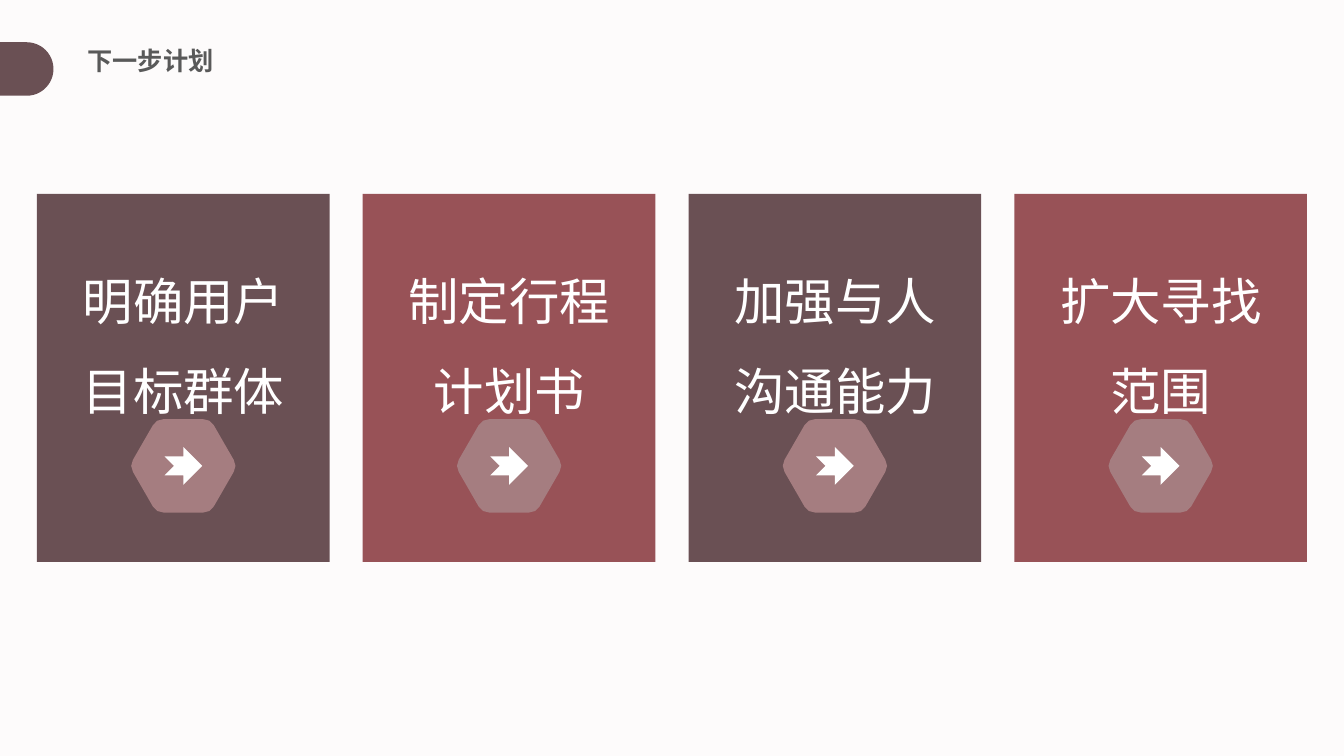
"""Build the next-step plan slide with four action cards."""
from dataclasses import dataclass
from math import cos, pi, sin

from lxml import etree
from pptx import Presentation
from pptx.dml.color import RGBColor
from pptx.enum.shapes import MSO_SHAPE
from pptx.enum.text import MSO_AUTO_SIZE, PP_ALIGN
from pptx.oxml.ns import qn
from pptx.util import Pt

RECTANGLE = MSO_SHAPE.RECTANGLE
DELAY = MSO_SHAPE.FLOWCHART_DELAY
NOTCHED_ARROW = MSO_SHAPE.NOTCHED_RIGHT_ARROW
GROW = MSO_AUTO_SIZE.SHAPE_TO_FIT_TEXT
CENTER = PP_ALIGN.CENTER

PLUM, ROSE, MAUVE, WHITE = "6A5054", "985257", "A57D80", "FFFFFF"
BACKGROUND, TITLE_GRAY = "FDFBFB", "595959"
CJK_FONT = "Noto Sans CJK SC"
CARD_LEFT, CARD_STEP = 26.4, 232.7
CARD_TOP, CARD_WIDTH, CARD_HEIGHT = 138.5, 209, 262.9
BADGE_OFFSET, BADGE_Y = 104.6, 332.8
BADGE_RADIUS, CORNER_CUT, CORNER_STEPS = 38.5, 5, 2
ARROW_SIZE = 26.9


@dataclass(frozen=True)
class Area:
    left: float
    top: float
    width: float
    height: float

    def lengths(self) -> list:
        return [Pt(value) for value in (self.left, self.top, self.width, self.height)]


@dataclass(frozen=True)
class Card:
    message: str
    color: str


CARDS = (
    Card("明确用户目标群体", PLUM),
    Card("制定行程计划书", ROSE),
    Card("加强与人沟通能力", PLUM),
    Card("扩大寻找范围", ROSE),
)


def rgb(value: str) -> RGBColor:
    return RGBColor.from_string(value)


def paint(shape, color: str) -> None:
    shape.shadow.inherit = False
    shape.fill.solid()
    shape.fill.fore_color.rgb = rgb(color)
    shape.line.fill.background()


def add_block(shapes, kind, area: Area, color: str) -> None:
    paint(shapes.add_shape(kind, *area.lengths()), color)


def add_label(shapes, area: Area, text: str, size: float, color: str,
              font: str = CJK_FONT, bold: bool = False, wrap: bool = True,
              spacing: float = 1.0) -> None:
    box = shapes.add_textbox(*area.lengths())
    frame = box.text_frame
    para = frame.paragraphs[0]
    span = para.add_run()
    span.text = text
    formats = {
        frame: {"word_wrap": wrap, "auto_size": GROW},
        para: {"alignment": CENTER, "line_spacing": spacing},
        span.font: {"name": font, "size": Pt(size), "bold": bold},
    }
    for target, values in formats.items():
        for name, value in values.items():
            setattr(target, name, value)
    span.font.color.rgb = rgb(color)
    east_asian = etree.SubElement(span._r.get_or_add_rPr(), qn("a:ea"))
    east_asian.set("typeface", CJK_FONT)


def rounded_hexagon(center_x: float, center_y: float) -> list[tuple[int, int]]:
    corners = [(center_x + BADGE_RADIUS * cos(index * pi / 3),
                center_y + BADGE_RADIUS * sin(index * pi / 3)) for index in range(6)]
    share = CORNER_CUT / BADGE_RADIUS
    points = []
    for index, corner in enumerate(corners):
        before, after = corners[index - 1], corners[(index + 1) % 6]
        for step in range(CORNER_STEPS + 1):
            t = step / CORNER_STEPS
            points.append(tuple(
                Pt(c + share * ((1 - t) ** 2 * (b - c) + t ** 2 * (a - c)))
                for b, c, a in zip(before, corner, after)))
    return points


def add_badge(shapes, center_x: float) -> None:
    start, *others = rounded_hexagon(center_x, BADGE_Y)
    builder = shapes.build_freeform(*start, scale=1.0)
    builder.add_line_segments(others, close=True)
    paint(builder.convert_to_shape(), MAUVE)
    half = ARROW_SIZE / 2
    arrow_area = Area(center_x - half, BADGE_Y - half, ARROW_SIZE, ARROW_SIZE)
    add_block(shapes, NOTCHED_ARROW, arrow_area, WHITE)


def add_card(page, card: Card, left: float) -> None:
    shapes = page.shapes.add_group_shape().shapes
    add_block(shapes, RECTANGLE, Area(left, CARD_TOP, CARD_WIDTH, CARD_HEIGHT), card.color)
    add_label(shapes, Area(left + 21.5, 167.6, 166.3, 130.3), card.message, 36, WHITE, spacing=1.5)
    add_badge(shapes, left + BADGE_OFFSET)


def main() -> None:
    deck = Presentation()
    deck.slide_width, deck.slide_height = Pt(960), Pt(540)
    page = deck.slides.add_slide(deck.slide_layouts[6])
    page.background.fill.solid()
    page.background.fill.fore_color.rgb = rgb(BACKGROUND)
    add_block(page.shapes, DELAY, Area(0, 30.2, 38.2, 38.2), PLUM)
    add_label(page.shapes, Area(54.9, 28.8, 105.1, 28.8), "下一步计划", 18, TITLE_GRAY,
              font="Arial", bold=True, wrap=False)
    for index, card in enumerate(CARDS):
        add_card(page, card, CARD_LEFT + index * CARD_STEP)
    deck.save("out.pptx")


if __name__ == "__main__":
    main()
